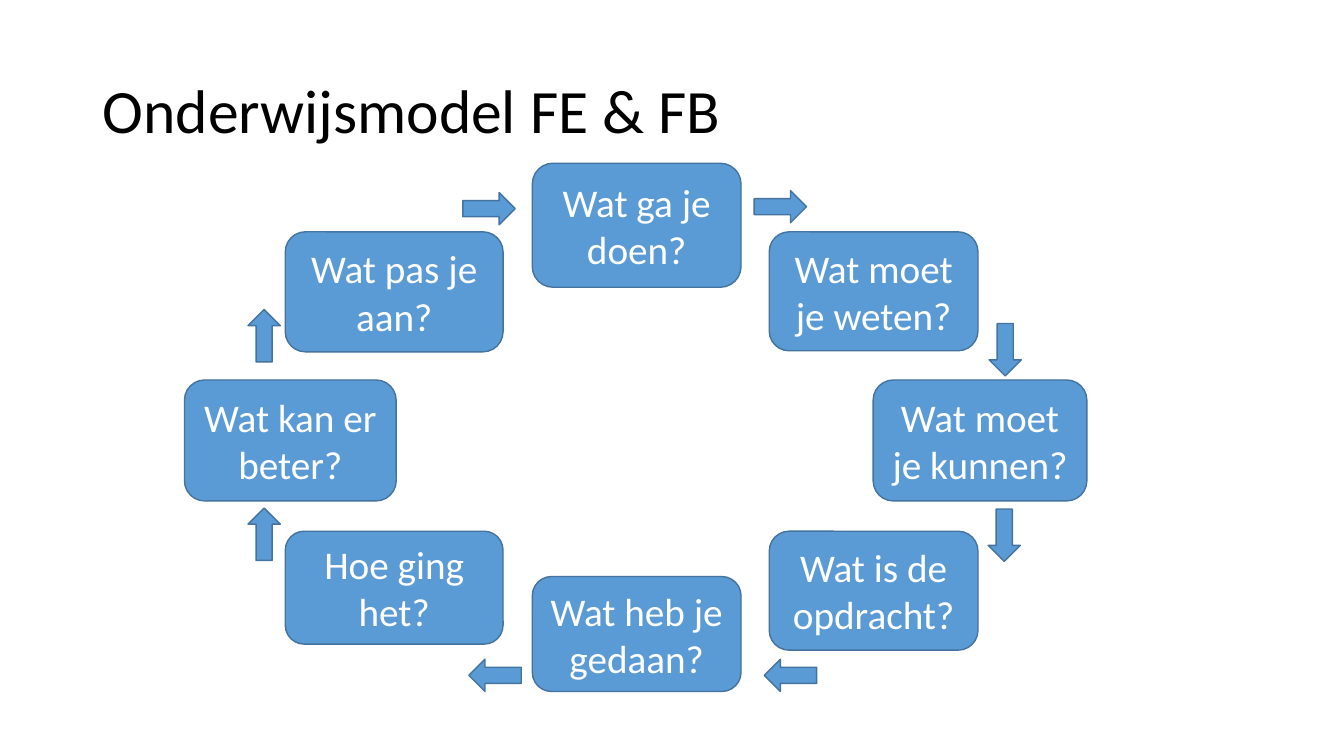
import pptx
import pptx.util
import pptx.dml.color
import pptx.enum.shapes
import pptx.enum.text

Inches, Pt = pptx.util.Inches, pptx.util.Pt
SHAPE = pptx.enum.shapes.MSO_SHAPE
ALIGN = pptx.enum.text.PP_ALIGN
MIDDLE = pptx.enum.text.MSO_ANCHOR.MIDDLE
BLUE = pptx.dml.color.RGBColor(0x5B, 0x9B, 0xD5)
EDGE = pptx.dml.color.RGBColor(0x43, 0x73, 0x9E)
WHITE = pptx.dml.color.RGBColor(0xFF, 0xFF, 0xFF)
BLACK = pptx.dml.color.RGBColor(0x00, 0x00, 0x00)

# Columns of the ring: (left, width); rows: top. All in inches.
COLS = [(1.83, 2.1), (2.83, 2.16), (5.28, 2.07), (7.63, 2.07), (8.66, 2.12)]
ROWS = [1.62, 2.3, 3.77, 5.27, 5.72]
ARROW_W, ARROW_H = 0.52, 0.32

# Clockwise from the top: text, column, row, height,
# then left, top and rotation of the arrow to the next step
STEPS = [
    ("Wat ga je doen?", 2, 0, 1.23, 7.48, 1.89, 0),
    ("Wat moet je weten?", 3, 1, 1.18, 9.71, 3.31, 90),
    ("Wat moet je kunnen?", 4, 2, 1.2, 9.7, 5.15, 90),
    ("Wat is de opdracht?", 3, 3, 1.18, 7.58, 6.54, 180),
    ("Wat heb je gedaan?", 2, 4, 1.14, 4.65, 6.54, 180),
    ("Hoe ging het?", 1, 3, 1.12, 2.36, 5.14, 270),
    ("Wat kan er beter?", 0, 2, 1.2, 2.36, 3.17, 270),
    ("Wat pas je aan?", 1, 1, 1.19, 4.59, 1.91, 0),
]


def add_blue_shape(s, kind, left, top, width, height):
    sp = s.shapes.add_shape(kind, Inches(left), Inches(top), Inches(width), Inches(height))
    sp.shadow.inherit = False
    sp.fill.solid()
    sp.fill.fore_color.rgb = BLUE
    sp.line.color.rgb = EDGE
    sp.line.width = Pt(1)
    return sp


def set_text(sp, text, size, color, align):
    tf = sp.text_frame
    tf.word_wrap = True
    tf.vertical_anchor = MIDDLE
    tf.text = text
    p = tf.paragraphs[0]
    p.alignment = align
    font = p.runs[0].font
    font.name = "Calibri"
    font.size = Pt(size)
    font.color.rgb = color
    return p


prs = pptx.Presentation()
prs.slide_width, prs.slide_height = Inches(13.33), Inches(7.5)
s = prs.slides.add_slide(prs.slide_layouts[6])

title = s.shapes.add_textbox(Inches(0.92), Inches(0.4), Inches(11.5), Inches(1.45))
p = set_text(title, "Onderwijsmodel FE & FB", 44, BLACK, ALIGN.LEFT)
p.line_spacing = 0.9

for text, col, row, height, arrow_left, arrow_top, rotation in STEPS:
    left, width = COLS[col]
    box = add_blue_shape(s, SHAPE.ROUNDED_RECTANGLE, left, ROWS[row], width, height)
    set_text(box, text, 28, WHITE, ALIGN.CENTER)
    arrow = add_blue_shape(s, SHAPE.RIGHT_ARROW, arrow_left, arrow_top, ARROW_W, ARROW_H)
    arrow.rotation = rotation

prs.save("out.pptx")
